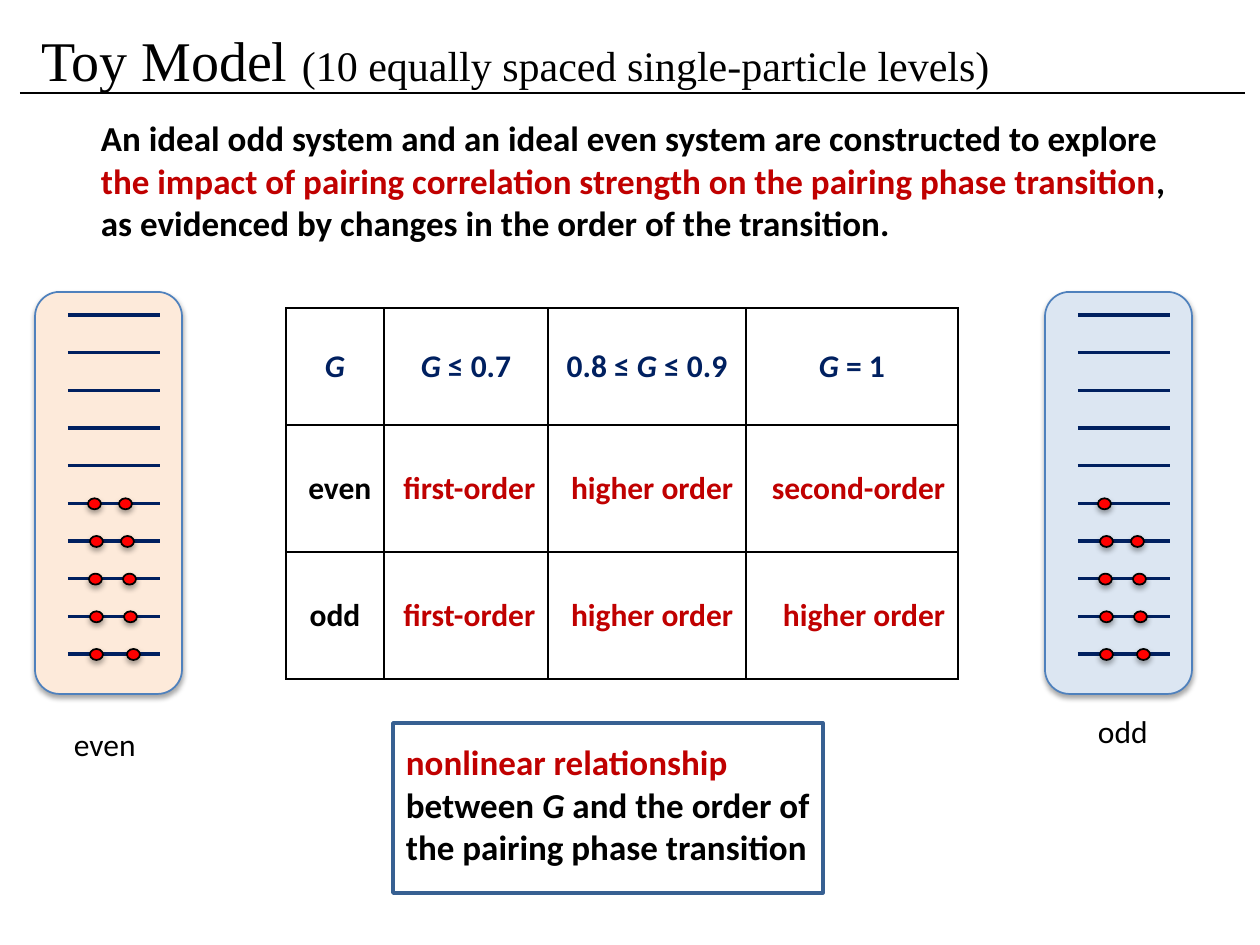
"""Builds the toy model slide with level schemes, an order table and a finding."""
import dataclasses

import lxml.etree
import pptx
import pptx.dml.color
import pptx.enum.shapes
import pptx.enum.text
import pptx.oxml.ns
import pptx.util

SCALE = 914400 / 126
SHAPE = pptx.enum.shapes.MSO_SHAPE
ALIGN = pptx.enum.text.PP_ALIGN
ANCHOR = pptx.enum.text.MSO_ANCHOR


@dataclasses.dataclass(frozen=True)
class Theme:
    ink: str = "000000"
    red: str = "C00000"
    navy: str = "002060"
    dot: str = "FF0000"
    edge: str = "4F81BD"
    frame: str = "376092"
    peach: str = "FDEADA"
    sky: str = "DCE6F2"
    serif: str = "Times New Roman"
    sans: str = "Calibri"
    title: int = 32
    sub: int = 24
    lead: int = 20
    body: int = 18


def emu(*sizes):
    return [pptx.util.Emu(round(size * SCALE)) for size in sizes]


def rgb(code):
    return pptx.dml.color.RGBColor.from_string(code)


def assign(target, values):
    for name, value in values.items():
        setattr(target, name, value)


def child(parent, tag, **values):
    node = lxml.etree.SubElement(parent, pptx.oxml.ns.qn(tag))
    for name, value in values.items():
        node.set(name, str(value))
    return node


class Deck:
    def __init__(self, theme):
        self.theme = theme
        self.show = pptx.Presentation()
        wide, high = emu(1260, 945)
        assign(self.show, {"slide_width": wide, "slide_height": high})
        self.slide = self.show.slides.add_slide(self.show.slide_layouts[6])
        self.shapes = self.slide.shapes

    def group(self):
        self.shapes = self.slide.shapes.add_group_shape().shapes

    def leave(self):
        self.shapes = self.slide.shapes

    def line(self, left, right, y, color, width):
        rule = self.shapes.add_connector(
            pptx.enum.shapes.MSO_CONNECTOR.STRAIGHT, *emu(left, y, right, y))
        rule.line.color.rgb = rgb(color)
        rule.line.width = pptx.util.Pt(width)
        child(rule._element.spPr, "a:effectLst")

    def shape(self, kind, box, fill, color, width=1, shadow=True):
        item = self.shapes.add_shape(kind, *emu(*box))
        item.shadow.inherit = False
        if fill:
            item.fill.solid()
            item.fill.fore_color.rgb = rgb(fill)
        else:
            item.fill.background()
        item.line.color.rgb = rgb(color)
        item.line.width = pptx.util.Pt(width)
        if shadow:
            effects = item._element.spPr.find(pptx.oxml.ns.qn("a:effectLst"))
            outer = child(effects, "a:outerShdw", blurRad=40000, dist=23000,
                          dir=5400000, rotWithShape=0)
            shade = child(outer, "a:srgbClr", val="000000")
            child(shade, "a:alpha", val=35000)

    def words(self, frame, runs, base, align=ALIGN.LEFT):
        para = frame.paragraphs[0]
        para.alignment = align
        for text, color, extra in runs:
            run = para.add_run()
            run.text = text
            style = {**base, **extra}
            style["size"] = pptx.util.Pt(style["size"])
            assign(run.font, style)
            run.font.color.rgb = rgb(color)

    def text(self, box, runs, base, pad=13, **values):
        frame = self.shapes.add_textbox(*emu(*box)).text_frame
        side, end = emu(pad, 6)
        assign(frame, {"word_wrap": True, "margin_left": side, "margin_right": side,
                       "margin_top": end, "margin_bottom": end, **values})
        self.words(frame, runs, base)

    def table(self, left, top, cols, rows, cells, base):
        box = emu(left, top, sum(cols), sum(rows))
        grid = self.shapes.add_table(len(rows), len(cols), *box).table
        assign(grid, {"first_row": False, "horz_banding": False})
        for col, wide in zip(grid.columns, emu(*cols)):
            col.width = wide
        for row, high, line in zip(grid.rows, emu(*rows), cells):
            row.height = high
            for cell, (runs, align) in zip(row.cells, line):
                self.border(cell)
                cell.fill.background()
                cell.vertical_anchor = ANCHOR.MIDDLE
                self.words(cell.text_frame, runs, base, align)

    def border(self, cell):
        props = cell._tc.get_or_add_tcPr()
        for side in ("a:lnL", "a:lnR", "a:lnT", "a:lnB"):
            edge = child(props, side, w=12700)
            child(child(edge, "a:solidFill"), "a:srgbClr", val=self.theme.ink)

    def scheme(self, left, fill, dots):
        self.group()
        self.shape(SHAPE.ROUNDED_RECTANGLE, (left, 292, 147, 402), fill, self.theme.edge)
        levels = [315 + level * 113 / 3 for level in range(10)]
        for y in levels:
            self.line(left + 33, left + 125, y, self.theme.navy, 2)
        for y, row in zip(levels[-len(dots):], dots):
            for x in row:
                self.shape(SHAPE.OVAL, (left + x, y - 5, 13, 11),
                           self.theme.dot, self.theme.ink)
        self.leave()


def main():
    look = Theme()
    deck = Deck(look)
    ink, red, navy = look.ink, look.red, look.navy
    slant = {"italic": True}
    lead = {"name": look.sans, "size": look.lead, "bold": True}
    body = {"name": look.sans, "size": look.body}

    deck.line(20, 1245, 93, ink, 1)
    deck.text((35, 16, 1191, 87), [
        ("Toy Model ", ink, {}),
        ("(10 equally spaced single-particle levels)", ink, {"size": look.sub}),
    ], {"name": look.serif, "size": look.title}, pad=6, vertical_anchor=ANCHOR.MIDDLE)
    deck.text((88, 111, 1095, 140), [
        ("An ideal odd system and an ideal even system are constructed to explore ", ink, {}),
        ("the impact of pairing correlation strength on the pairing phase transition", red, {}),
        (", as evidenced by changes in the order of the transition.", ink, {}),
    ], lead)

    pairs = [(55, 86), (54, 88), (55, 89), (55, 92)]
    deck.scheme(35, look.peach, [(53, 84)] + pairs)
    deck.scheme(1045, look.sky, [(53,)] + pairs)
    for label, box in (("even", (68, 719, 76, 50)), ("odd", (1092, 706, 63, 50))):
        deck.text(box, [(label, ink, {})], body, pad=6, word_wrap=False)

    symbol = ("G", navy, slant)
    heads = [
        [symbol],
        [("G ", navy, slant), ("≤ 0.7", navy, {})],
        [("0.8 ≤ ", navy, {}), ("G ", navy, slant), ("≤ 0.9", navy, {})],
        [("G ", navy, slant), ("= 1", navy, {})],
    ]
    cells = [[(runs, ALIGN.CENTER) for runs in heads]]
    for name, align, last in (("even", ALIGN.RIGHT, "second-order"),
                              ("odd", ALIGN.CENTER, "higher order")):
        orders = ("first-order", "higher order", last)
        cells.append([([(name, ink, {})], align)]
                     + [([(order, red, {})], ALIGN.RIGHT) for order in orders])
    deck.table(286, 308, (98, 164, 198, 212), (117, 127, 127), cells,
               {**body, "bold": True})

    deck.group()
    deck.shape(SHAPE.RECTANGLE, (393, 723, 430, 170), None, look.frame, 2, False)
    deck.text((393, 735, 450, 149), [
        ("nonlinear relationship", red, {}),
        (" between ", ink, {}),
        ("G", ink, slant),
        (" and the order of the pairing phase transition", ink, {}),
    ], lead)
    deck.leave()
    deck.show.save("out.pptx")


if __name__ == "__main__":
    main()
